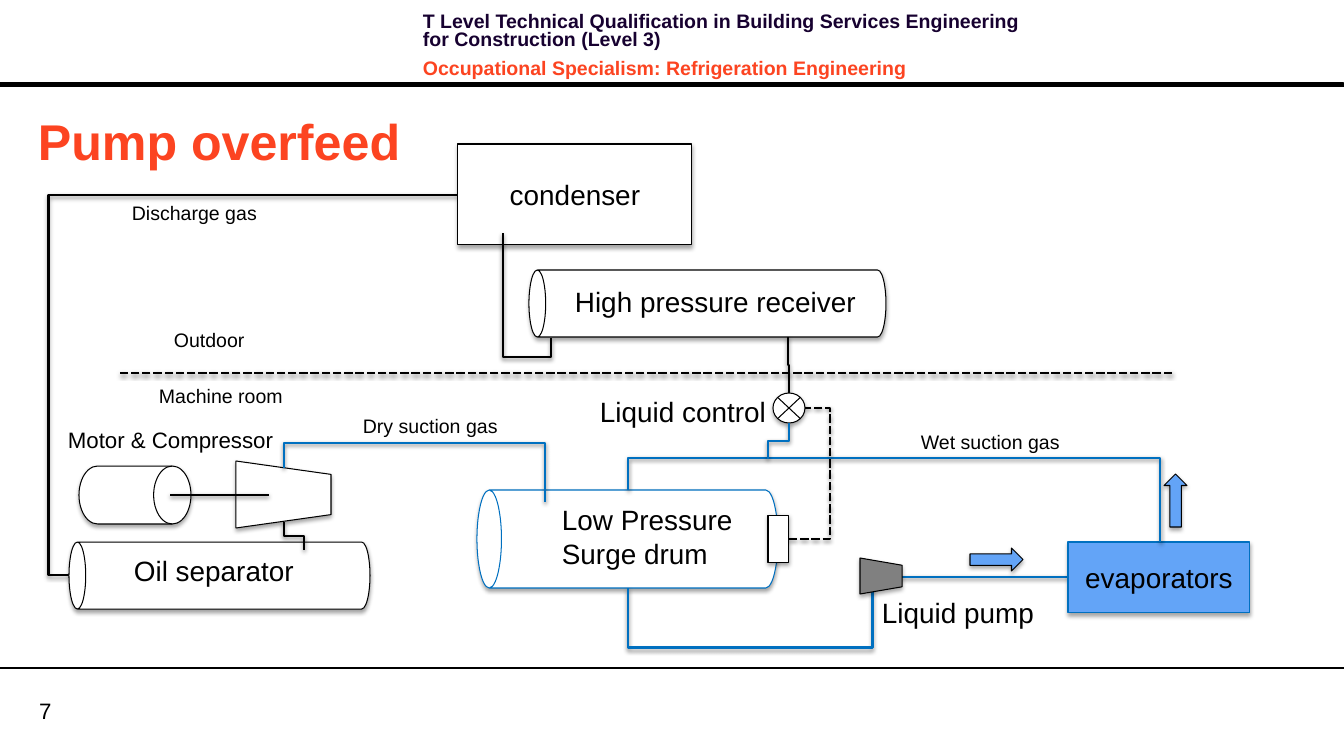
"""Build the pump overfeed refrigeration diagram slide."""
from dataclasses import dataclass

from lxml import etree
from pptx import Presentation
from pptx.dml.color import RGBColor
from pptx.enum.dml import MSO_LINE
from pptx.enum.shapes import MSO_CONNECTOR, MSO_SHAPE
from pptx.enum.text import MSO_ANCHOR, PP_ALIGN
from pptx.oxml.ns import qn
from pptx.util import Emu, Pt

EMU_PER_PX = 9108
WIDTH, HEIGHT = 1344, 751
STRAIGHT, ELBOW = MSO_CONNECTOR.STRAIGHT, MSO_CONNECTOR.ELBOW
DASHED = MSO_LINE.SQUARE_DOT
TOP, MIDDLE = MSO_ANCHOR.TOP, MSO_ANCHOR.MIDDLE
LEFT, CENTER = PP_ALIGN.LEFT, PP_ALIGN.CENTER
RECTANGLE, CAN, ARROW = MSO_SHAPE.RECTANGLE, MSO_SHAPE.CAN, MSO_SHAPE.LEFT_ARROW
TAPER = MSO_SHAPE.FLOWCHART_MANUAL_OPERATION
DRUM = MSO_SHAPE.FLOWCHART_DIRECT_ACCESS_STORAGE
VALVE = MSO_SHAPE.FLOWCHART_SUMMING_JUNCTION
PROCESS = MSO_SHAPE.FLOWCHART_PROCESS


@dataclass(frozen=True)
class Theme:
    """Colours, type sizes and line widths of the slide."""
    font: str = "Arial"
    black: str = "000000"
    white: str = "FFFFFF"
    navy: str = "170130"
    orange: str = "FC4421"
    pipe_blue: str = "0070C0"
    cold_blue: str = "63A4F7"
    grey: str = "808080"
    title: int = 36
    equipment: int = 20
    caption: int = 16
    small: int = 14
    outline: float = 0.75
    pipe: float = 2


THEME = Theme()


def px(value):
    """Turn pixels into EMU."""
    return Emu(round(value * EMU_PER_PX))


def rgb(code):
    """Turn a hex code into a colour."""
    return RGBColor.from_string(code)


def set_effects(shape, shadow_alpha=0, distance=1.8):
    """Replace the theme effects by a soft downward shadow or by none."""
    effects = etree.SubElement(shape._element.spPr, qn("a:effectLst"))
    if shadow_alpha:
        shadow = etree.SubElement(
            effects, qn("a:outerShdw"), blurRad=str(Pt(3.1)), dist=str(Pt(distance)),
            dir="5400000", rotWithShape="0")
        color = etree.SubElement(shadow, qn("a:srgbClr"), val=THEME.black)
        etree.SubElement(color, qn("a:alpha"), val=str(shadow_alpha * 1000))


def write_text(shape, text, size=THEME.equipment, colors=(THEME.black,), bold=False,
               wrap=True, anchor=TOP, align=LEFT, inset=None, line_spacing=None, gap=0):
    """Write one paragraph per line of text, cycling through the colours."""
    frame = shape.text_frame
    frame.word_wrap = wrap
    frame.vertical_anchor = anchor
    if inset is not None:
        frame.margin_left = frame.margin_right = px(inset)
        frame.margin_top = frame.margin_bottom = px(inset)
    for index, line in enumerate(text.split("\n")):
        paragraph = frame.add_paragraph() if index else frame.paragraphs[0]
        paragraph.alignment = align
        paragraph.space_before = Pt(gap if index else 0)
        paragraph.space_after = Pt(gap)
        if line_spacing:
            paragraph.line_spacing = Pt(line_spacing)
        run = paragraph.add_run()
        run.text = line
        run.font.name, run.font.size, run.font.bold = THEME.font, Pt(size), bold
        run.font.color.rgb = rgb(colors[index % len(colors)])


def add_label(slide, text, left, top, width, height, **text_format):
    """Add a text box."""
    box = slide.shapes.add_textbox(px(left), px(top), px(width), px(height))
    write_text(box, text, **text_format)


def add_part(slide, kind, left, top, width, height, rotation=0, fill=THEME.white,
             line=THEME.black, text=None, shadow_alpha=35):
    """Add a preset shape whose box is given as it appears after rotation."""
    if rotation % 180:
        left, top = left + (width - height) / 2, top + (height - width) / 2
        width, height = height, width
    shape = slide.shapes.add_shape(kind, px(left), px(top), px(width), px(height))
    shape.rotation = rotation
    shape.fill.solid()
    shape.fill.fore_color.rgb = rgb(fill)
    shape.line.color.rgb = rgb(line)
    shape.line.width = Pt(THEME.outline)
    set_effects(shape, shadow_alpha)
    if text:
        write_text(shape, text, anchor=MIDDLE, align=CENTER)


def add_line(slide, start, end, kind=STRAIGHT, color=THEME.black, width=THEME.pipe,
             dash=None, shadow_alpha=38):
    """Add a connector between two points."""
    connector = slide.shapes.add_connector(kind, *map(px, (*start, *end)))
    connector.line.color.rgb = rgb(color)
    connector.line.width = Pt(width)
    if dash:
        connector.line.dash_style = dash
    set_effects(connector, shadow_alpha, 1.6)
    return connector


def add_pipe(slide, start, end, bend, second_bend=None, vertical=False, **line_format):
    """Add an elbow that leaves sideways, or vertically, and turns at the bends."""
    (x1, y1), (x2, y2) = start, end
    if vertical:
        ratios = [(bend - y1) / (y2 - y1)]
        direction = 1 if y2 > y1 else -1
        center_x, center_y = (x1 + x2) / 2, (y1 + y2) / 2
        half_length, half_rise = abs(y2 - y1) / 2, direction * (x1 - x2) / 2
        start = center_x - half_length, center_y - half_rise
        end = center_x + half_length, center_y + half_rise
    else:
        ratios = [(bend - x1) / (x2 - x1)]
    if second_bend is not None:
        ratios.append((second_bend - y1) / (y2 - y1))
    connector = add_line(slide, start, end, ELBOW, **line_format)
    properties = connector._element.spPr
    if vertical:
        rotation = 90 if direction > 0 else 270
        properties.find(qn("a:xfrm")).set("rot", str(rotation * 60000))
    geometry = properties.find(qn("a:prstGeom"))
    geometry.set("prst", f"bentConnector{len(ratios) + 2}")
    guides = geometry.find(qn("a:avLst"))
    for number, ratio in enumerate(ratios, 1):
        etree.SubElement(guides, qn("a:gd"), name=f"adj{number}",
                         fmla=f"val {round(ratio * 100000)}")


def add_page_frame(slide):
    """Add the header, title, footer rule and page number."""
    add_part(slide, RECTANGLE, 0, 83, WIDTH, 4, fill=THEME.black, shadow_alpha=0)
    add_label(slide, "T Level Technical Qualification in Building Services Engineering "
              "for Construction (Level 3)\nOccupational Specialism: Refrigeration Engineering",
              413, 9, 620, 64, size=THEME.small, colors=(THEME.navy, THEME.orange),
              bold=True, line_spacing=13.1, gap=4)
    add_label(slide, "7", 39, 697, 64, 27, size=THEME.caption, anchor=MIDDLE, inset=0)
    add_line(slide, (0, 668), (WIDTH, 668), width=THEME.outline, shadow_alpha=0)
    add_label(slide, "Pump overfeed", 28, 105, 1277, 71, size=THEME.title,
              colors=(THEME.orange,), bold=True, anchor=MIDDLE)


def add_high_side(slide):
    """Add the condenser, receiver, compressor and oil separator."""
    add_pipe(slide, (85, 575), (458, 195), 48)
    add_part(slide, RECTANGLE, 458, 144, 234, 101, text="condenser")
    add_part(slide, CAN, 529, 270, 357, 67, 270)
    add_label(slide, "High pressure receiver", 565, 280, 305, 77)
    add_pipe(slide, (551, 338), (503, 233), 357, vertical=True)
    add_part(slide, TAPER, 236, 461, 95, 67, 270)
    add_part(slide, DRUM, 79, 466, 112, 58)
    add_line(slide, (170, 495), (269, 495))
    add_part(slide, CAN, 69, 542, 301, 67, 270)
    add_pipe(slide, (284, 522), (304, 550), 536, vertical=True)
    add_label(slide, "Oil separator", 124, 549, 182, 44, wrap=False)
    add_label(slide, "Motor & Compressor", 58, 421, 238, 37, size=THEME.caption)


def add_low_side(slide):
    """Add the surge drum, pump, evaporators and liquid control."""
    blue = THEME.pipe_blue
    add_part(slide, CAN, 477, 490, 301, 98, 270, line=blue)
    add_label(slide, "Low Pressure\nSurge drum", 552, 498, 200, 77, wrap=False)
    add_pipe(slide, (545, 502), (284, 468), 443, vertical=True, color=blue)
    add_pipe(slide, (1068, 577), (628, 588), 872, 648, color=blue)
    add_part(slide, RECTANGLE, 1068, 542, 182, 71, fill=THEME.cold_blue, line=blue,
             text="evaporators")
    add_part(slide, TAPER, 860, 558, 42, 36, 270, fill=THEME.grey)
    add_label(slide, "Liquid pump", 872, 591, 174, 44, wrap=False)
    add_pipe(slide, (1160, 542), (628, 490), 458, vertical=True, color=blue)
    add_part(slide, ARROW, 1164, 474, 23, 53, 90, fill=THEME.cold_blue)
    add_part(slide, ARROW, 970, 548, 53, 23, 180, fill=THEME.cold_blue)
    add_pipe(slide, (789, 393), (788, 337), 365, vertical=True)
    add_part(slide, VALVE, 773, 393, 32, 30)
    add_pipe(slide, (789, 539), (805, 408), 830, dash=DASHED)
    add_part(slide, PROCESS, 768, 515, 21, 47)
    add_label(slide, "Liquid control", 590, 390, 187, 44)
    add_pipe(slide, (789, 423), (768, 459), 441, vertical=True, color=blue)


def main():
    """Build and save the slide."""
    presentation = Presentation()
    presentation.slide_width, presentation.slide_height = px(WIDTH), px(HEIGHT)
    slide = presentation.slides.add_slide(presentation.slide_layouts[6])
    add_page_frame(slide)
    add_high_side(slide)
    add_low_side(slide)
    add_line(slide, (1172, 373), (120, 373), dash=DASHED)
    for text, left, top, width in (
            ("Dry suction gas", 353, 409, 176), ("Discharge gas", 122, 196, 220),
            ("Wet suction gas", 911, 425, 167), ("Outdoor", 164, 323, 220),
            ("Machine room", 149, 379, 220)):
        add_label(slide, text, left, top, width, 34, size=THEME.small)
    presentation.save("out.pptx")


if __name__ == "__main__":
    main()
